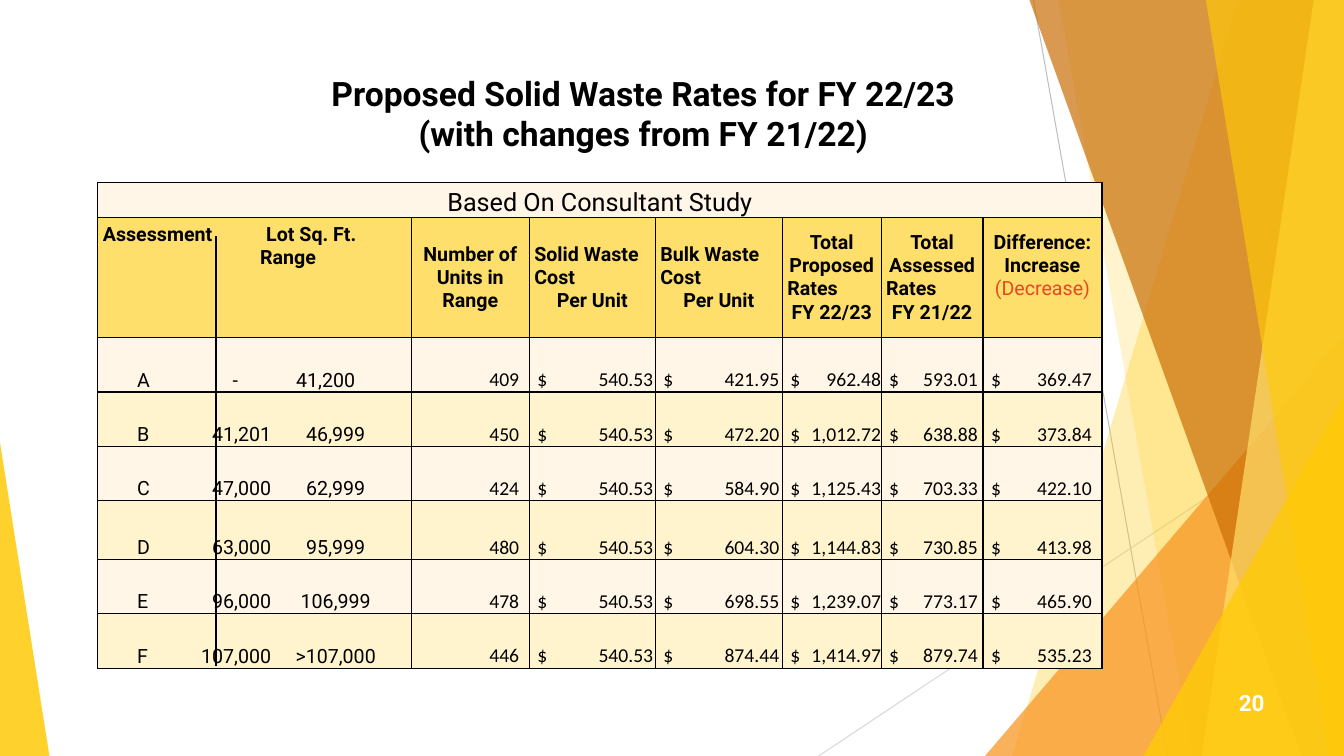
"""Build the slide on proposed solid waste rates."""
import pptx
import pptx.util
import pptx.dml.color
import pptx.enum.text
import pptx.enum.shapes
import pptx.oxml.ns
import lxml.etree

Inches, Pt = pptx.util.Inches, pptx.util.Pt
RGBColor = pptx.dml.color.RGBColor
ALIGN = pptx.enum.text.PP_ALIGN
ANCHOR = pptx.enum.text.MSO_ANCHOR
qn = pptx.oxml.ns.qn

BLACK = RGBColor(0x00, 0x00, 0x00)
WHITE = RGBColor(0xFF, 0xFF, 0xFF)
RED = RGBColor(0xE6, 0x48, 0x23)
GOLD = RGBColor(0xFF, 0xCA, 0x08)
PALE = RGBColor(0xFF, 0xDF, 0x6B)
AMBER = RGBColor(0xF8, 0x93, 0x1D)
BROWN = RGBColor(0xCA, 0x6F, 0x06)
CREAM = RGBColor(0xFF, 0xF6, 0xE7)
LEMON = RGBColor(0xFF, 0xF4, 0xCE)
GREY = RGBColor(0xBF, 0xBF, 0xBF)
MIST = RGBColor(0xD9, 0xD9, 0xD9)

WIDE, HIGH = 13.33, 7.5
deck = pptx.Presentation()
deck.slide_width, deck.slide_height = Inches(WIDE), Inches(HIGH)
slide = deck.slides.add_slide(deck.slide_layouts[5])
shapes = slide.shapes


def rule(ends, hue, size):
    """Draw a plain straight line."""
    line = shapes.add_connector(pptx.enum.shapes.MSO_CONNECTOR.STRAIGHT, *map(Inches, ends))
    line.line.color.rgb = hue
    line.line.width = Pt(size)
    lxml.etree.SubElement(line._element.spPr, qn("a:effectLst"))


def write(para, text, size, align=ALIGN.LEFT, face="Roboto", bold=False, hue=BLACK, tabs=()):
    """Fill one paragraph, with tab stops given as (inches, kind)."""
    para.text = text
    para.alignment = align
    if tabs:
        stops = lxml.etree.SubElement(para._p.get_or_add_pPr(), qn("a:tabLst"))
        for place, kind in tabs:
            lxml.etree.SubElement(stops, qn("a:tab"), pos=str(Inches(place)), algn=kind)
    font = para.font
    font.name, font.size, font.bold = face, Pt(size), bold
    font.color.rgb = hue


rule((10.25, 0, 11.58, HIGH), GREY, 0.75)
rule((WIDE, 4.03, 8.12, HIGH), MIST, 0.75)

wings = [
    ("band", (12.28, 10.04), GOLD, 30),
    ("band", (10.5, 11.83), GOLD, 20),
    ("right", (9.77, 3.33, 3.56, 4.17), AMBER, 72),
    ("band", (10.21, 12.91), BROWN, 70),
    ("band", (13.03, 11.92), PALE, 70),
    ("band", (11.96, 13.18), GOLD, 65),
    ("right", (11.34, 3.93, 1.99, 3.57), GOLD, 80),
    ("left", (0, 4.39, 0.49, 3.11), GOLD, 85),
]
for kind, place, hue, cover in wings:
    if kind == "band":
        top, foot = place
        form = shapes.build_freeform(Inches(top), 0)
        form.add_line_segments([(Inches(x), Inches(y)) for x, y in ((WIDE, 0), (WIDE, HIGH), (foot, HIGH))])
        wing = form.convert_to_shape()
    else:
        wing = shapes.add_shape(pptx.enum.shapes.MSO_SHAPE.ISOSCELES_TRIANGLE, *map(Inches, place))
        wing.adjustments[0] = 1 if kind == "right" else 0
    wing.shadow.inherit = False
    wing.line.fill.background()
    wing.fill.solid()
    wing.fill.fore_color.rgb = hue
    tint = wing._element.spPr.find(".//" + qn("a:srgbClr"))
    lxml.etree.SubElement(tint, qn("a:alpha"), val=str(cover * 1000))

title = shapes.title
title.left, title.top, title.width, title.height = map(Inches, (2.99, 0.67, 6.78, 0.91))
frame = title.text_frame
frame.word_wrap = True
frame.auto_size = pptx.enum.text.MSO_AUTO_SIZE.NONE
frame.vertical_anchor = ANCHOR.TOP
write(frame.paragraphs[0], "Proposed Solid Waste Rates for FY 22/23 (with changes from FY 21/22)",
      24, ALIGN.CENTER, bold=True)

cols = [3.11, 1.17, 1.25, 1.26, 0.98, 1.01, 1.18]
rows = [0.35, 1.19, 0.54, 0.54, 0.54, 0.58, 0.54, 0.54]
heads = [
    ["Assessment\tLot Sq. Ft.", "\tRange"],
    ["Number of", "Units in", "Range"],
    ["Solid Waste", "Cost", "Per Unit"],
    ["Bulk Waste", "Cost", "Per Unit"],
    ["Total", "Proposed", "Rates", "FY 22/23"],
    ["Total", "Assessed", "Rates", "FY 21/22"],
    ["Difference:", "Increase", "(Decrease)"],
]
rates = [
    ["A", "-", "41,200", "409", "540.53", "421.95", "962.48", "593.01", "369.47"],
    ["B", "41,201", "46,999", "450", "540.53", "472.20", "1,012.72", "638.88", "373.84"],
    ["C", "47,000", "62,999", "424", "540.53", "584.90", "1,125.43", "703.33", "422.10"],
    ["D", "63,000", "95,999", "480", "540.53", "604.30", "1,144.83", "730.85", "413.98"],
    ["E", "96,000", "106,999", "478", "540.53", "698.55", "1,239.07", "773.17", "465.90"],
    ["F", "107,000", ">107,000", "446", "540.53", "874.44", "1,414.97", "879.74", "535.23"],
]
sums = [1.15, 1.15, 0.9, 0.88, 1.0]

grid = shapes.add_table(len(rows), len(cols), Inches(0.97), Inches(1.81),
                        Inches(sum(cols)), Inches(sum(rows))).table
grid.first_row = grid.horz_banding = False
for col, size in zip(grid.columns, cols):
    col.width = Inches(size)
for row, size in zip(grid.rows, rows):
    row.height = Inches(size)

for r in range(len(rows)):
    for c in range(len(cols)):
        cell = grid.cell(r, c)
        pad = 0.05 if r == 1 else 0
        cell.margin_left = cell.margin_right = cell.margin_top = cell.margin_bottom = Inches(pad)
        cell.vertical_anchor = ANCHOR.MIDDLE if r == 1 else ANCHOR.BOTTOM
        for side in ("a:lnL", "a:lnR", "a:lnT", "a:lnB"):
            edge = lxml.etree.SubElement(cell._tc.get_or_add_tcPr(), qn(side), w=str(Pt(1)))
            ink = lxml.etree.SubElement(edge, qn("a:solidFill"))
            lxml.etree.SubElement(ink, qn("a:srgbClr"), val=str(BLACK))
        cell.fill.solid()
        cell.fill.fore_color.rgb = PALE if r == 1 else LEMON if r % 2 else CREAM

grid.cell(0, 0).merge(grid.cell(0, 6))
write(grid.cell(0, 0).text_frame.paragraphs[0], "Based On Consultant Study", 18, ALIGN.CENTER)

flush = ("Solid Waste", "Bulk Waste", "Cost", "Rates")
for c, lines in enumerate(heads):
    frame = grid.cell(1, c).text_frame
    for i, text in enumerate(lines):
        para = frame.paragraphs[0] if i == 0 else frame.add_paragraph()
        left = c == 0 or text in flush
        down = text == "(Decrease)"
        write(para, text, 14, ALIGN.LEFT if left else ALIGN.CENTER, bold=not down,
              hue=RED if down else BLACK, tabs=[(1.62 - 0.06 * i, "l")] if c == 0 else ())
grid.cell(1, 0).vertical_anchor = ANCHOR.TOP
grid.cell(1, 6).margin_bottom = Inches(0.29)

for r, (name, low, high, count, *costs) in enumerate(rates, 2):
    spots = (1.39, 2.26) if low == "-" else (1.72, 2.36)
    write(grid.cell(r, 0).text_frame.paragraphs[0], f"\t{name}\t{low}\t{high}", 14,
          tabs=[(0.39, "l"), (spots[0], "r"), (spots[1], "ctr")])
    grid.cell(r, 1).margin_right = Inches(0.1)
    write(grid.cell(r, 1).text_frame.paragraphs[0], count, 14, ALIGN.RIGHT, "Calibri")
    for c, cost in enumerate(costs):
        cell = grid.cell(r, c + 2)
        cell.margin_left = Inches(0.08)
        write(cell.text_frame.paragraphs[0], f"$\t{cost}", 14, face="Calibri", tabs=[(sums[c], "r")])

rule((2.14, 2.34, 2.14, 6.61), BLACK, 1.5)

page = shapes.add_textbox(*map(Inches, (11.89, 6.77, 0.75, 0.4))).text_frame
page.word_wrap = True
page.vertical_anchor = ANCHOR.MIDDLE
write(page.paragraphs[0], "20", 16, ALIGN.RIGHT, bold=True, hue=WHITE)

deck.save("out.pptx")
